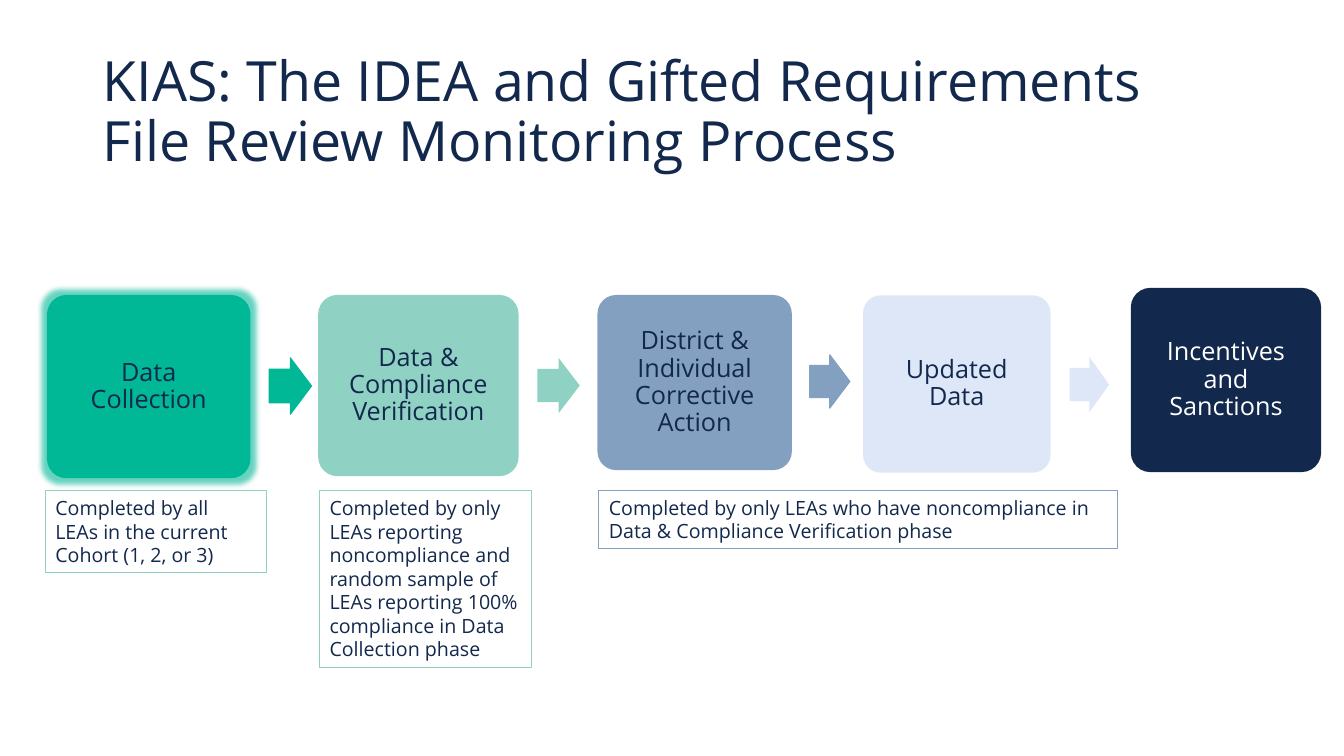
from pptx import Presentation
from pptx.dml.color import RGBColor
from pptx.enum.shapes import MSO_SHAPE as Shape
from pptx.enum.text import MSO_ANCHOR as Anchor, MSO_AUTO_SIZE as AutoSize, PP_ALIGN as Align
from pptx.oxml import parse_xml
from pptx.oxml.ns import nsdecls, qn
from pptx.util import Inches, Pt

FONT = "Open Sans"
NAVY, WHITE = "12284C", "FFFFFF"
GREEN, MINT, BLUE, PALE = "00B796", "8FD2C4", "83A0C0", "DDE7F7"
TITLE = "KIAS: The IDEA and Gifted Requirements File Review Monitoring Process"

# text, box (left, top, width, height), fill, text colour, outline in points
PHASES = [
    ("Data Collection", (0.48, 2.94, 1.99, 1.79), GREEN, NAVY, 2),
    ("Data & Compliance Verification", (3.17, 2.94, 1.96, 1.77), MINT, NAVY, 2),
    ("District & Individual Corrective Action", (5.94, 2.94, 1.9, 1.71), BLUE, NAVY, 2),
    ("Updated Data", (8.56, 2.93, 1.86, 1.76), PALE, NAVY, 0),
    ("Incentives and Sanctions", (11.23, 2.87, 1.86, 1.8), NAVY, WHITE, 2),
]
ARROWS = [
    ((2.67, 3.55, 0.42, 0.56), GREEN, 0.75),
    ((5.33, 3.55, 0.42, 0.55), MINT, 0),
    ((8.03, 3.52, 0.4, 0.53), BLUE, 0.75),
    ((10.61, 3.54, 0.39, 0.55), PALE, 0),
]
NOTES = [
    ("Completed by all LEAs in the current Cohort (1, 2, or 3)",
     (0.45, 4.87, 2.19, 0.81), MINT),
    ("Completed by only LEAs reporting noncompliance and random sample of "
     "LEAs reporting 100% compliance in Data Collection phase",
     (3.17, 4.87, 2.1, 1.75), MINT),
    ("Completed by only LEAs who have noncompliance in "
     "Data & Compliance Verification phase",
     (5.94, 4.87, 5.14, 0.57), BLUE),
]


def rgb(color):
    return RGBColor.from_string(color)


def write(shape, text, size, color, align=Align.LEFT, anchor=Anchor.TOP, spacing=None):
    frame = shape.text_frame
    frame.word_wrap = True
    frame.auto_size = AutoSize.NONE
    frame.vertical_anchor = anchor
    paragraph = frame.paragraphs[0]
    paragraph.text = text
    paragraph.alignment = align
    paragraph.line_spacing = spacing
    paragraph.font.name = FONT
    paragraph.font.size = Pt(size)
    paragraph.font.color.rgb = rgb(color)


def add_filled(slide, kind, box, color, outline):
    shape = slide.shapes.add_shape(kind, *map(Inches, box))
    shape.shadow.inherit = False
    shape.fill.solid()
    shape.fill.fore_color.rgb = rgb(color)
    if outline:
        shape.line.color.rgb = rgb(color)
        shape.line.width = Pt(outline)
    else:
        shape.line.fill.background()
    return shape


def add_phase(slide, text, box, fill, color, outline):
    shape = add_filled(slide, Shape.ROUNDED_RECTANGLE, box, fill, outline)
    shape.adjustments[0] = 0.1
    frame = shape.text_frame
    frame.margin_left = frame.margin_right = Inches(0.07)
    frame.margin_top = frame.margin_bottom = Inches(0.07)
    write(shape, text, 18, color, Align.CENTER, Anchor.MIDDLE, 0.9)
    return shape


def add_arrow(slide, box, color, outline):
    arrow = add_filled(slide, Shape.RIGHT_ARROW, box, color, outline)
    arrow.adjustments[0] = 0.6
    arrow.adjustments[1] = 0.5


def add_note(slide, text, box, border):
    note = slide.shapes.add_textbox(*map(Inches, box))
    note.line.color.rgb = rgb(border)
    note.line.width = Pt(0.75)
    write(note, text, 14, NAVY)


def add_glow(shape, color, radius):
    effects = shape.element.spPr.find(qn("a:effectLst"))
    effects.append(parse_xml(
        f'<a:glow {nsdecls("a")} rad="{Inches(radius)}"><a:srgbClr val="{color}">'
        '<a:alpha val="60000"/></a:srgbClr></a:glow>'))


def add_title(slide):
    title = slide.shapes.title
    title.left, title.top = Inches(0.92), Inches(0.4)
    title.width, title.height = Inches(11.5), Inches(1.45)
    write(title, TITLE, 39.6, NAVY, anchor=Anchor.MIDDLE, spacing=0.9)


def main():
    presentation = Presentation()
    presentation.slide_width, presentation.slide_height = Inches(13.33), Inches(7.5)
    slide = presentation.slides.add_slide(presentation.slide_layouts[5])
    add_title(slide)
    phases = [add_phase(slide, *phase) for phase in PHASES]
    add_glow(phases[0], GREEN, 0.11)
    for arrow in ARROWS:
        add_arrow(slide, *arrow)
    for note in NOTES:
        add_note(slide, *note)
    presentation.save("out.pptx")


if __name__ == "__main__":
    main()
